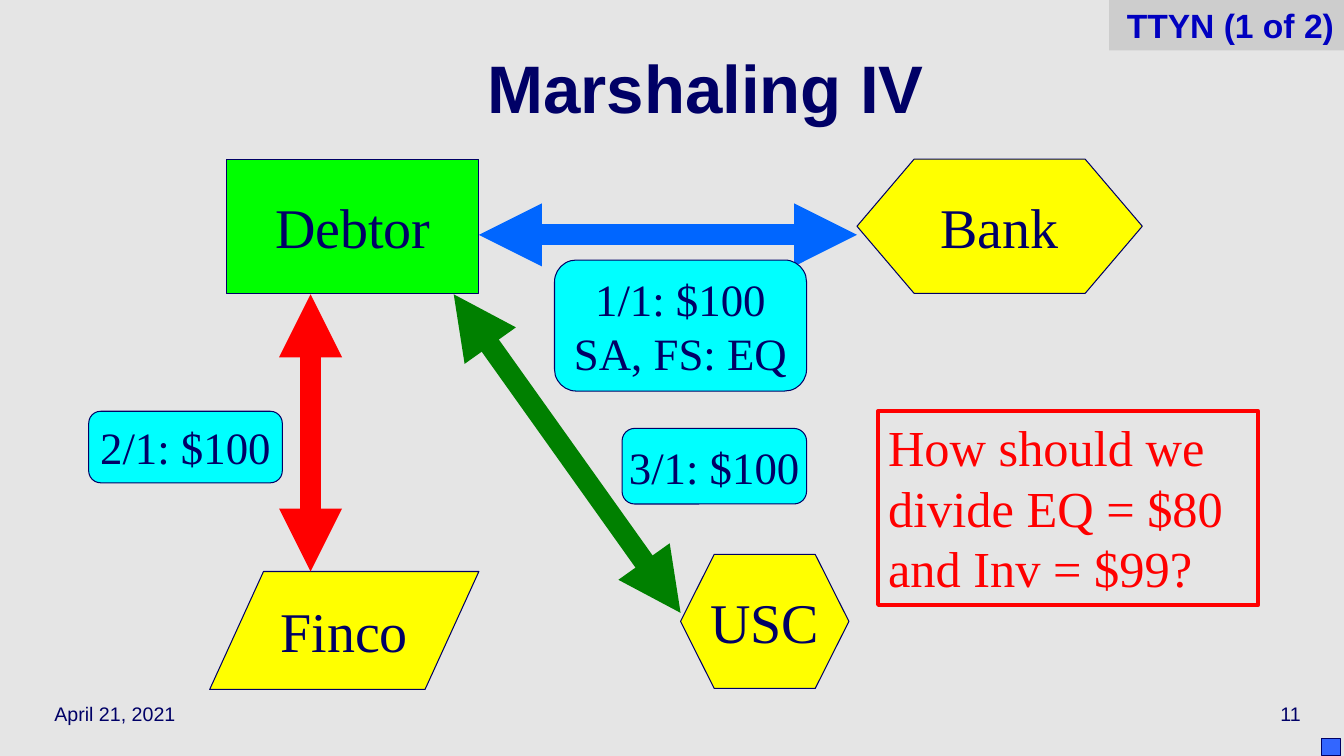
from dataclasses import dataclass

from lxml.etree import SubElement
from pptx import Presentation
from pptx.dml.color import RGBColor
from pptx.enum.shapes import MSO_CONNECTOR as Wire, MSO_SHAPE as Kind
from pptx.enum.text import MSO_ANCHOR as Anchor, PP_ALIGN as Align
from pptx.oxml.ns import qn
from pptx.shapes.autoshape import Shape
from pptx.slide import Slide
from pptx.text.text import TextFrame
from pptx.util import Pt

PX = 9144  # EMU per px, 100 px to the inch

NAVY = RGBColor(0x00, 0x00, 0x66)
INK = RGBColor(0x00, 0x00, 0xC0)
BLUE = RGBColor(0x00, 0x66, 0xFF)
MARK = RGBColor(0x33, 0x66, 0xFF)
RED = RGBColor(0xFF, 0x00, 0x00)
GREEN = RGBColor(0x00, 0x80, 0x00)
LIME = RGBColor(0x00, 0xFF, 0x00)
YELLOW = RGBColor(0xFF, 0xFF, 0x00)
CYAN = RGBColor(0x00, 0xFF, 0xFF)
PALE = RGBColor(0xE5, 0xE5, 0xE5)
GREY = RGBColor(0xCD, 0xCD, 0xCD)

SANS = "Arial"
SERIF = "Times New Roman"


@dataclass(frozen=True)
class Box:
    left: int
    top: int
    width: int
    height: int

    def emu(self) -> tuple[int, ...]:
        return tuple(n * PX for n in (self.left, self.top, self.width, self.height))


@dataclass(frozen=True)
class Style:
    font: str
    size: int
    color: RGBColor = NAVY
    bold: bool = False
    align: Align = Align.CENTER
    anchor: Anchor = Anchor.MIDDLE
    wrap: bool = True


@dataclass(frozen=True)
class Node:
    kind: Kind
    box: Box
    fill: RGBColor | None = None
    line: RGBColor | None = NAVY
    weight: float = 0.75
    text: str = ""
    style: Style | None = None


@dataclass(frozen=True)
class Link:
    start: tuple[int, int]
    end: tuple[int, int]
    color: RGBColor


TITLE = Style(SANS, 48, bold=True)
PARTY = Style(SERIF, 40, wrap=False)
CLAIM = Style(SERIF, 32, wrap=False)
ASK = Style(SERIF, 36, RED, align=Align.LEFT, anchor=Anchor.TOP)
TAG = Style(SANS, 24, INK, True, Align.RIGHT, Anchor.TOP)
DATE = Style(SANS, 14, align=Align.LEFT)
PAGE = Style(SANS, 14, align=Align.RIGHT)

PARTIES = [
    Node(Kind.FLOWCHART_DATA, Box(208, 567, 267, 117), YELLOW, text="Finco", style=PARTY),
    Node(Kind.FLOWCHART_PROCESS, Box(225, 158, 250, 133), LIME, text="Debtor", style=PARTY),
    Node(Kind.FLOWCHART_PREPARATION, Box(850, 158, 283, 133), YELLOW, text="Bank", style=PARTY),
    Node(Kind.FLOWCHART_PREPARATION, Box(675, 550, 167, 133), YELLOW, text="USC", style=PARTY),
]
LINKS = [
    Link((475, 233), (850, 233), BLUE),
    Link((308, 292), (308, 567), RED),
    Link((450, 292), (675, 608), GREEN),
]
CLAIMS = [
    Node(Kind.FLOWCHART_ALTERNATE_PROCESS, box, CYAN, text=text, style=CLAIM)
    for box, text in (
        (Box(88, 408, 192, 71), "2/1: $100"),
        (Box(550, 258, 250, 130), "1/1: $100\nSA, FS: EQ"),
        (Box(617, 425, 183, 75), "3/1: $100"),
    )
]
EXTRAS = [
    Node(Kind.RECTANGLE, Box(871, 408, 377, 192), line=RED, weight=3,
         text="How should we divide EQ = $80 and Inv = $99?", style=ASK),
    Node(Kind.RECTANGLE, Box(1311, 733, 19, 17), MARK),
    Node(Kind.RECTANGLE, Box(1100, 0, 233, 50), GREY, line=None,
         text="TTYN (1 of 2)", style=TAG),
]
FOOT = [
    (Box(44, 683, 278, 50), "April 21, 2021", DATE),
    (Box(1022, 683, 278, 50), "11", PAGE),
]


def write(frame: TextFrame, text: str, style: Style) -> None:
    frame.text = text
    frame.word_wrap = style.wrap
    frame.vertical_anchor = style.anchor
    for para in frame.paragraphs:
        para.alignment = style.align
        for run in para.runs:
            font = run.font
            font.name = style.font
            font.size = Pt(style.size)
            font.bold = style.bold
            font.color.rgb = style.color


def draw(slide: Slide, node: Node) -> Shape:
    shape = slide.shapes.add_shape(node.kind, *node.box.emu())
    shape.shadow.inherit = False
    if node.fill is None:
        shape.fill.background()
    else:
        shape.fill.solid()
        shape.fill.fore_color.rgb = node.fill
    if node.line is None:
        shape.line.fill.background()
    else:
        shape.line.color.rgb = node.line
        shape.line.width = Pt(node.weight)
    if node.style:
        write(shape.text_frame, node.text, node.style)
    return shape


def join(slide: Slide, link: Link) -> None:
    """Draw a thick line with an arrowhead at both ends."""
    ends = [n * PX for n in link.start + link.end]
    wire = slide.shapes.add_connector(Wire.STRAIGHT, *ends)
    wire.line.color.rgb = link.color
    wire.line.width = Pt(15)
    line = wire.line._get_or_add_ln()
    for end in ("a:headEnd", "a:tailEnd"):
        SubElement(line, qn(end), type="triangle")
    SubElement(line.getparent(), qn("a:effectLst"))


def main() -> None:
    deck = Presentation()
    deck.slide_width, deck.slide_height = 1333 * PX, 750 * PX
    slide = deck.slides.add_slide(deck.slide_layouts[5])
    slide.background.fill.solid()
    slide.background.fill.fore_color.rgb = PALE

    title = slide.shapes.title
    title.left, title.top, title.width, title.height = Box(89, 33, 1222, 125).emu()
    write(title.text_frame, "Marshaling IV", TITLE)
    title.text_frame.paragraphs[0].line_spacing = 0.7

    for box, text, style in FOOT:
        write(slide.shapes.add_textbox(*box.emu()).text_frame, text, style)
    for node in PARTIES:
        draw(slide, node)
    for link in LINKS:
        join(slide, link)
    for node in CLAIMS + EXTRAS:
        draw(slide, node)
    deck.save("out.pptx")


if __name__ == "__main__":
    main()
